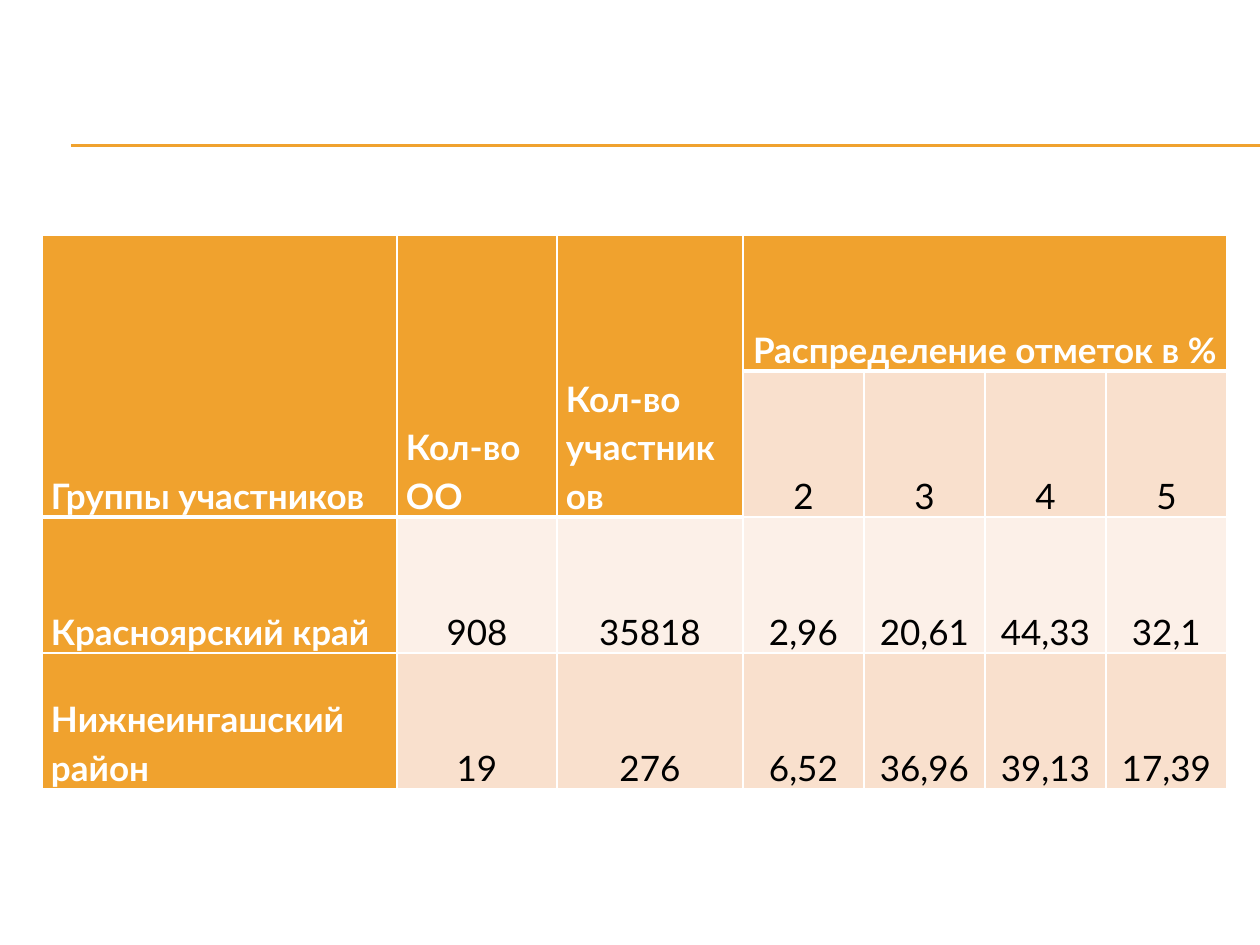
from dataclasses import dataclass

from lxml import etree
from pptx import Presentation
from pptx.dml.color import RGBColor
from pptx.enum.shapes import MSO_CONNECTOR
from pptx.enum.text import MSO_ANCHOR, PP_ALIGN
from pptx.oxml.ns import qn
from pptx.util import Emu, Pt

LEFT, CENTER = PP_ALIGN.LEFT, PP_ALIGN.CENTER
BOTTOM = MSO_ANCHOR.BOTTOM
STRAIGHT = MSO_CONNECTOR.STRAIGHT

PX_PER_INCH = 126
COLORS = {
    "accent": "F0A22E",
    "band_dark": "F9E0CD",
    "band_light": "FCF0E8",
    "white": "FFFFFF",
    "black": "000000",
}
FONT = "Lato"
COLUMN_WIDTHS = (355, 160, 186, 121, 121, 121, 121)
ROW_HEIGHTS = (136, 146, 136, 136)
RULE_TOPS = (145, 146)
GRADES = ("2", "3", "4", "5")
FIRST_GRADE_COLUMN = 3
GROUPS = (
    ("Красноярский край", "band_light", ("908", "35818", "2,96", "20,61", "44,33", "32,1")),
    ("Нижнеингашский район", "band_dark", ("19", "276", "6,52", "36,96", "39,13", "17,39")),
)


@dataclass(frozen=True)
class Entry:
    """A table cell with its place, span and look."""

    text: str
    row: int
    column: int
    fill: str
    bold: bool = False
    align: PP_ALIGN = CENTER
    row_span: int = 1
    column_span: int = 1
    top_border: int = 1
    bottom_border: int = 1


def px(length: int) -> Emu:
    """Turn pixels into EMU."""
    return Emu(round(length * 914400 / PX_PER_INCH))


def rgb(name: str) -> RGBColor:
    """Look up a named colour."""
    return RGBColor.from_string(COLORS[name])


def write_text(frame, text: str, *, color: str, bold: bool, align: PP_ALIGN, size: int = 20) -> None:
    """Write one formatted paragraph into a text frame."""
    paragraph = frame.paragraphs[0]
    paragraph.alignment = align
    paragraph.line_spacing = 1.15
    paragraph.space_after = Pt(10)
    run = paragraph.add_run()
    run.text = text
    run.font.name = FONT
    run.font.size = Pt(size)
    run.font.bold = bold
    run.font.color.rgb = rgb(color)


def set_borders(cell, widths: dict[str, int]) -> None:
    """Draw white borders of the given point widths on the named edges."""
    properties = cell._tc.get_or_add_tcPr()
    for edge, width in widths.items():
        line = etree.SubElement(properties, qn(f"a:ln{edge}"), w=str(Pt(width)))
        fill = etree.SubElement(line, qn("a:solidFill"))
        etree.SubElement(fill, qn("a:srgbClr"), val=COLORS["white"])


def draw_entry(table, entry: Entry) -> None:
    """Fill one table entry, with borders on its outer edges only."""
    last_row = entry.row + entry.row_span - 1
    last_column = entry.column + entry.column_span - 1
    origin = table.cell(entry.row, entry.column)
    if entry.row_span * entry.column_span > 1:
        origin.merge(table.cell(last_row, last_column))
    for row in range(entry.row, last_row + 1):
        for column in range(entry.column, last_column + 1):
            cell = table.cell(row, column)
            edges = {
                "L": (column == entry.column, 1),
                "R": (column == last_column, 1),
                "T": (row == entry.row, entry.top_border),
                "B": (row == last_row, entry.bottom_border),
            }
            outer = {edge: width for edge, (shown, width) in edges.items() if shown}
            set_borders(cell, outer)
            cell.fill.solid()
            cell.fill.fore_color.rgb = rgb(entry.fill)
    set_borders_origin = {"margin_left": 9, "margin_right": 9, "margin_top": 0, "margin_bottom": 0}
    for margin, length in set_borders_origin.items():
        setattr(origin, margin, px(length))
    origin.vertical_anchor = BOTTOM
    color = "white" if entry.bold else "black"
    write_text(origin.text_frame, entry.text, color=color, bold=entry.bold, align=entry.align)


def list_entries() -> list[Entry]:
    """Lay out the headings, the grades and the group results."""
    headings = ("Группы участников", "Кол-во ОО", "Кол-во участников")
    entries = [
        Entry(text, 0, column, "accent", True, LEFT, row_span=2, bottom_border=3)
        for column, text in enumerate(headings)
    ]
    entries.append(
        Entry("Распределение отметок в %", 0, FIRST_GRADE_COLUMN, "accent", True,
              column_span=len(GRADES), bottom_border=3)
    )
    for column, grade in enumerate(GRADES, start=FIRST_GRADE_COLUMN):
        entries.append(Entry(grade, 1, column, "band_dark", top_border=3))
    for row, (group, band, results) in enumerate(GROUPS, start=2):
        top = 3 if row == 2 else 1
        entries.append(Entry(group, row, 0, "accent", True, LEFT, top_border=top))
        for column, result in enumerate(results, start=1):
            below_heading = column < FIRST_GRADE_COLUMN
            entries.append(Entry(result, row, column, band, top_border=top if below_heading else 1))
    return entries


def draw_rule(slide, top: int) -> None:
    """Draw a thin horizontal rule running to the right slide edge."""
    rule = slide.shapes.add_connector(STRAIGHT, px(71), px(top), px(1260), px(top))
    rule.line.color.rgb = rgb("accent")
    rule.line.width = Pt(0.75)
    etree.SubElement(rule._element.spPr, qn("a:effectLst"))


def draw_results(slide) -> None:
    """Draw the table of grade distribution."""
    results = slide.shapes.add_table(
        len(ROW_HEIGHTS), len(COLUMN_WIDTHS), px(42), px(235),
        px(sum(COLUMN_WIDTHS)), px(sum(ROW_HEIGHTS)),
    ).table
    for column, width in zip(results.columns, COLUMN_WIDTHS):
        column.width = px(width)
    for row, height in zip(results.rows, ROW_HEIGHTS):
        row.height = px(height)
    for entry in list_entries():
        draw_entry(results, entry)


def main() -> None:
    """Build and save the slide."""
    presentation = Presentation()
    presentation.slide_width = px(1260)
    presentation.slide_height = px(945)
    slide = presentation.slides.add_slide(presentation.slide_layouts[6])
    for top in RULE_TOPS:
        draw_rule(slide, top)
    draw_results(slide)
    presentation.save("out.pptx")


if __name__ == "__main__":
    main()
